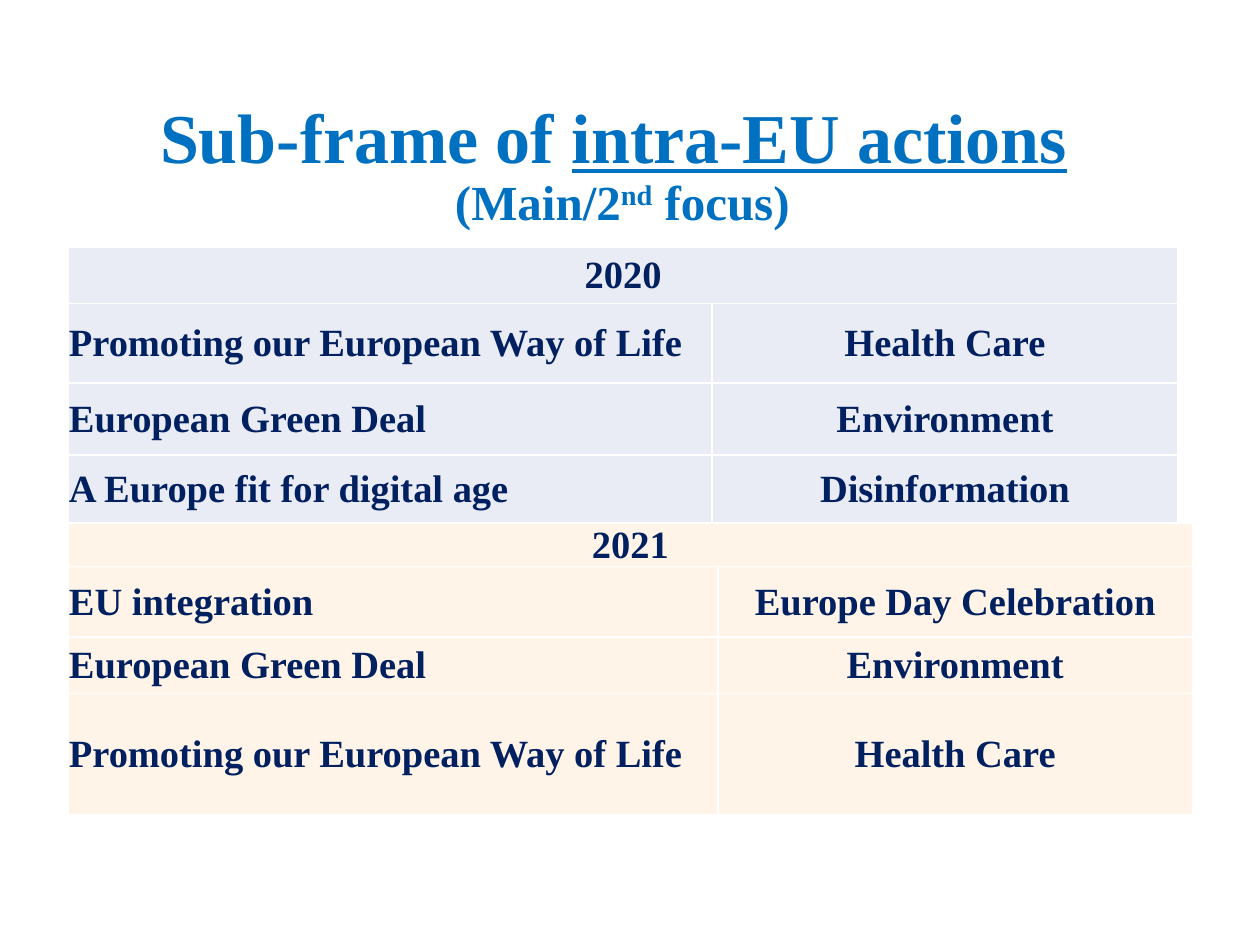
from lxml.etree import SubElement as Sub
from pptx import Presentation
from pptx.dml.color import RGBColor
from pptx.enum.text import MSO_ANCHOR as Anchor, MSO_AUTO_SIZE as Fit, PP_ALIGN as Align
from pptx.oxml.ns import qn
from pptx.util import Cm, Pt


def tint(code):
    return RGBColor.from_string(code)


class Deck:
    face = "Times New Roman"
    blue = "0070C0"
    navy = "002060"
    white = "FFFFFF"

    def __init__(self, wide, high):
        self.prs = Presentation()
        self.prs.slide_width, self.prs.slide_height = Cm(wide), Cm(high)
        self.slide = self.prs.slides.add_slide(self.prs.slide_layouts[5])

    def run(self, para, text, size, color, under=None, raised=False):
        run = para.add_run()
        run.text = text
        font = run.font
        font.name, font.size, font.bold = self.face, Pt(size), True
        font.color.rgb = tint(color)
        font.underline = under
        if raised:
            run._r.get_or_add_rPr().set("baseline", "30000")

    def title(self, left, top, wide, high, lines):
        shape = self.slide.shapes.title
        shape.left, shape.top = Cm(left), Cm(top)
        shape.width, shape.height = Cm(wide), Cm(high)
        frame = shape.text_frame
        frame.word_wrap, frame.auto_size = True, Fit.NONE
        frame.vertical_anchor = Anchor.MIDDLE
        para = frame.paragraphs[0]
        para.alignment, para.line_spacing = Align.CENTER, 0.9
        for i, (size, runs) in enumerate(lines):
            if i:
                para.add_line_break()
            for text, style in runs:
                self.run(para, text, size, self.blue, **style)

    def edge(self, cell):
        props = cell._tc.get_or_add_tcPr()
        for side in ("a:lnL", "a:lnR", "a:lnT", "a:lnB"):
            line = Sub(props, qn(side), w=str(Pt(1)))
            fill = Sub(line, qn("a:solidFill"))
            Sub(fill, qn("a:srgbClr"), val=self.white)

    def cell(self, cell, text, align, fill):
        self.edge(cell)
        cell.fill.solid()
        cell.fill.fore_color.rgb = tint(fill)
        cell.vertical_anchor = Anchor.MIDDLE
        cell.margin_left = cell.margin_right = cell.margin_top = Cm(0.02)
        cell.margin_bottom = 0
        if text:
            para = cell.text_frame.paragraphs[0]
            para.alignment = align
            self.run(para, text, 22, self.navy)

    def table(self, left, top, cols, rows, year, pairs, fill):
        grid = self.slide.shapes.add_table(
            len(rows), len(cols), Cm(left), Cm(top), Cm(sum(cols)), Cm(sum(rows))
        ).table
        for col, wide in zip(grid.columns, cols):
            col.width = Cm(wide)
        for row, high in zip(grid.rows, rows):
            row.height = Cm(high)
        grid.cell(0, 0).merge(grid.cell(0, 1))
        for r, texts in enumerate([(year, "")] + pairs):
            for c, text in enumerate(texts):
                align = Align.LEFT if r and not c else Align.CENTER
                self.cell(grid.cell(r, c), text, align, fill)


def main():
    deck = Deck(25.4, 19.05)
    deck.title(0.66, 1.75, 23.77, 3.23, [
        (40, [("Sub-frame of ", {}), ("intra-EU actions", {"under": True}),
              (" ", {"under": False})]),
        (28, [("(Main/2", {}), ("nd", {"raised": True}), (" focus)", {})]),
    ])
    life = ("Promoting our European Way of Life", "Health Care")
    green = ("European Green Deal", "Environment")
    deck.table(1.37, 4.98, [12.98, 9.4], [1.14, 1.6, 1.45, 1.4], "2020",
               [life, green, ("A Europe fit for digital age", "Disinformation")],
               "E9EBF5")
    deck.table(1.37, 10.54, [13.1, 9.57], [0.88, 1.42, 1.14, 2.44], "2021",
               [("EU integration", "Europe Day Celebration"), green, life],
               "FFF4E7")
    deck.prs.save("out.pptx")


if __name__ == "__main__":
    main()
